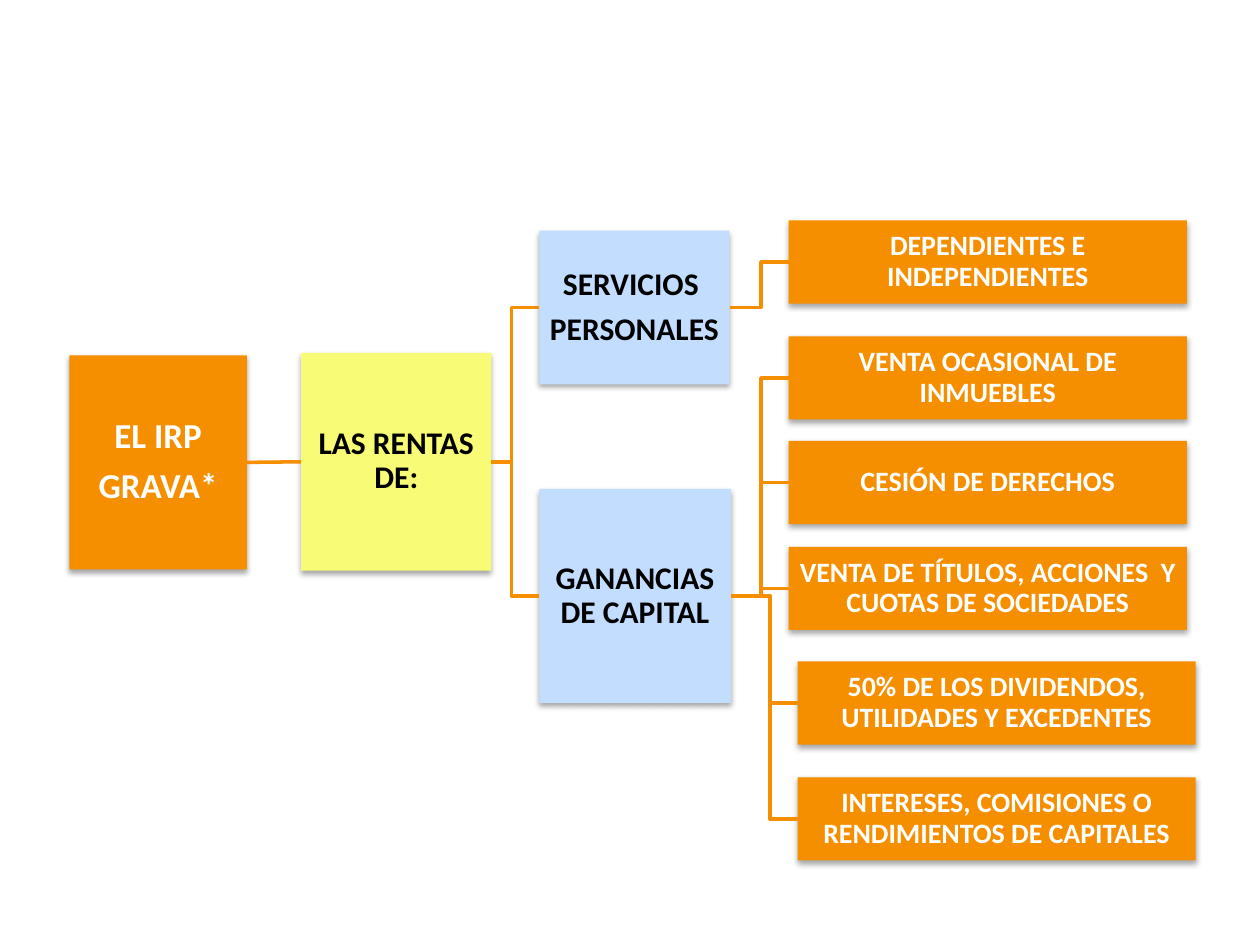
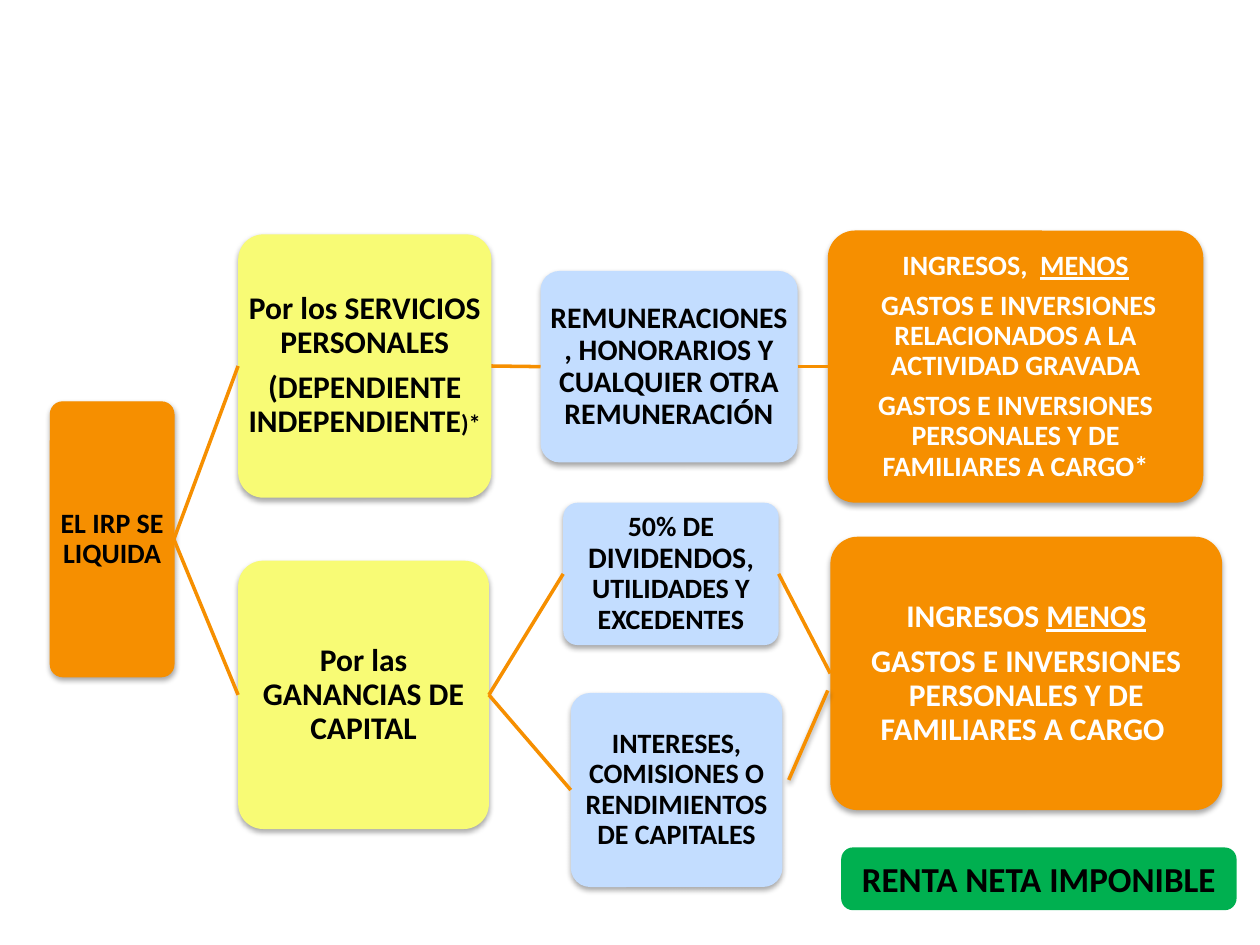
from pptx import Presentation
from pptx.dml.color import RGBColor
from pptx.enum.shapes import MSO_CONNECTOR, MSO_SHAPE
from pptx.enum.text import MSO_ANCHOR, PP_ALIGN
from pptx.oxml import parse_xml
from pptx.oxml.ns import nsdecls
from pptx.util import Inches, Pt

rgb = RGBColor.from_string
ORANGE, YELLOW, BLUE, GREEN = "F68F00", "F8FB75", "C3DDFF", "00B050"
BLACK, WHITE = "000000", "FFFFFF"
FONT = "Calibri"
NO_SHADOW = f'<a:effectLst {nsdecls("a")}/>'
SHADOW = (f'<a:effectLst {nsdecls("a")}><a:outerShdw blurRad="40000" dist="23000" '
          'dir="5400000" rotWithShape="0"><a:srgbClr val="000000">'
          '<a:alpha val="35000"/></a:srgbClr></a:outerShdw></a:effectLst>')


def box(slide, paragraphs, at, fill, size=16, color=BLACK, radius=None, line=0,
        margin=0.01, spacing=0.9, shadow=True):
    """Add a box; each paragraph is a string or a list of (text, font settings)."""
    kind = MSO_SHAPE.RECTANGLE if radius is None else MSO_SHAPE.ROUNDED_RECTANGLE
    s = slide.shapes.add_shape(kind, *[Inches(v) for v in at])
    if radius is not None:
        s.adjustments[0] = radius
    s.fill.solid()
    s.fill.fore_color.rgb = rgb(fill)
    if line:
        s.line.color.rgb = rgb(fill)
        s.line.width = Pt(line)
    else:
        s.line.fill.background()
    s._element.spPr.append(parse_xml(SHADOW if shadow else NO_SHADOW))

    tf = s.text_frame
    tf.word_wrap = True
    tf.vertical_anchor = MSO_ANCHOR.MIDDLE
    tf.margin_left = tf.margin_right = tf.margin_top = tf.margin_bottom = Inches(margin)
    for i, runs in enumerate(paragraphs):
        p = tf.add_paragraph() if i else tf.paragraphs[0]
        p.alignment = PP_ALIGN.CENTER
        p.line_spacing = spacing
        p.space_after = Pt(0.35 * size)
        for text, settings in [(runs, {})] if isinstance(runs, str) else runs:
            r = p.add_run()
            r.text = text
            r.font.name = FONT
            r.font.bold = True
            r.font.size = Pt(settings.get("size", size))
            r.font.underline = settings.get("underline", False)
            r.font.color.rgb = rgb(color)
    return s


def link(slide, start, end, elbow=False, shadow=False):
    (x1, y1), (x2, y2) = start, end
    if elbow:
        bend = x2 - Inches(0.22)
        builder = slide.shapes.build_freeform(x1, y1)
        builder.add_line_segments([(bend, y1), (bend, y2), (x2, y2)], close=False)
        s = builder.convert_to_shape()
        s.fill.background()
    else:
        s = slide.shapes.add_connector(MSO_CONNECTOR.STRAIGHT, x1, y1, x2, y2)
    s.line.color.rgb = rgb(ORANGE)
    s.line.width = Pt(2)
    s._element.spPr.append(parse_xml(SHADOW if shadow else NO_SHADOW))


prs = Presentation()
prs.slide_width, prs.slide_height = Inches(10), Inches(7.5)
blank = prs.slide_layouts[6]

# Slide 1: what the tax covers
taxed = prs.slides.add_slide(blank)
irp = box(taxed, ["EL IRP", "GRAVA*"], (0.55, 2.82, 1.41, 1.7), ORANGE, size=20, color=WHITE)
income = box(taxed, ["LAS RENTAS DE:"], (2.39, 2.8, 1.51, 1.73), YELLOW, size=18)
services = box(taxed, ["SERVICIOS ", "PERSONALES"], (4.28, 1.83, 1.51, 1.22), BLUE, size=18)
gains = box(taxed, ["GANANCIAS DE CAPITAL"], (4.28, 3.88, 1.52, 1.7), BLUE, size=18)
links = [(taxed, irp, income, False), (taxed, income, services, True),
         (taxed, income, gains, True)]

sources = [
    (services, 6.26, 1.75, "DEPENDIENTES E INDEPENDIENTES"),
    (gains, 6.26, 2.67, "VENTA OCASIONAL DE INMUEBLES"),
    (gains, 6.26, 3.5, "CESIÓN DE DERECHOS"),
    (gains, 6.26, 4.34, "VENTA DE TÍTULOS, ACCIONES  Y CUOTAS DE SOCIEDADES"),
    (gains, 6.33, 5.25, "50% DE LOS DIVIDENDOS, UTILIDADES Y EXCEDENTES"),
    (gains, 6.33, 6.17, "INTERESES, COMISIONES O RENDIMIENTOS DE CAPITALES"),
]
for parent, left, top, text in sources:
    source = box(taxed, [text], (left, top, 3.16, 0.66), ORANGE, color=WHITE)
    links.append((taxed, parent, source, True))

# Slide 2: how the tax is worked out
settled = prs.slides.add_slide(blank)
irp = box(settled, ["EL IRP SE LIQUIDA"], (0.4, 3.19, 0.98, 2.18), ORANGE,
          radius=0.1, line=0.75)
services = box(settled, ["Por los SERVICIOS PERSONALES",
                         [("(DEPENDIENTE INDEPENDIENTE", {}), (")*", {"size": 14})]],
               (1.89, 1.86, 2.01, 2.09), YELLOW, size=18, radius=0.1)
pay = box(settled, ["REMUNERACIONES, HONORARIOS Y CUALQUIER OTRA REMUNERACIÓN"],
          (4.29, 2.15, 2.04, 1.52), BLUE, size=17, radius=0.1)
services_base = box(settled, [
    [("INGRESOS,  ", {}), ("MENOS", {"underline": True})],
    " GASTOS E INVERSIONES RELACIONADOS A LA ACTIVIDAD GRAVADA",
    "GASTOS E INVERSIONES PERSONALES Y DE FAMILIARES A CARGO*",
], (6.57, 1.83, 2.98, 2.16), ORANGE, color=WHITE, radius=0.1, margin=0.04)
gains = box(settled, ["Por las GANANCIAS DE CAPITAL"], (1.89, 4.45, 1.99, 2.13), YELLOW,
            size=18, radius=0.1)
dividends = box(settled, [[("50% DE ", {}), ("DIVIDENDOS", {"size": 17}),
                           (", UTILIDADES Y EXCEDENTES", {})]],
                (4.47, 3.99, 1.71, 1.13), BLUE, radius=0.1)
gains_base = box(settled, [
    [("INGRESOS ", {}), ("MENOS", {"underline": True})],
    "GASTOS E INVERSIONES PERSONALES Y DE FAMILIARES A CARGO ",
], (6.59, 4.26, 3.11, 2.17), ORANGE, size=18, color=WHITE, radius=0.1)
interest = box(settled, ["INTERESES, COMISIONES O RENDIMIENTOS DE CAPITALES"],
               (4.53, 5.5, 1.68, 1.54), BLUE, radius=0.1)
box(settled, ["RENTA NETA IMPONIBLE"], (6.69, 6.74, 3.11, 0.47), GREEN, size=20,
    radius=0.17, line=2, margin=0.05, spacing=1.0, shadow=False)
link(settled, (Inches(6.26), Inches(6.19)), (Inches(6.57), Inches(5.48)), shadow=True)
for a, b in [(irp, services), (services, pay), (pay, services_base), (irp, gains),
             (gains, dividends), (dividends, gains_base), (gains, interest)]:
    links.append((settled, a, b, False))

# Every link runs from the middle of a right edge to the middle of a left edge
for slide, a, b, elbow in links:
    link(slide, (a.left + a.width, a.top + a.height // 2),
         (b.left, b.top + b.height // 2), elbow)

prs.save("out.pptx")
